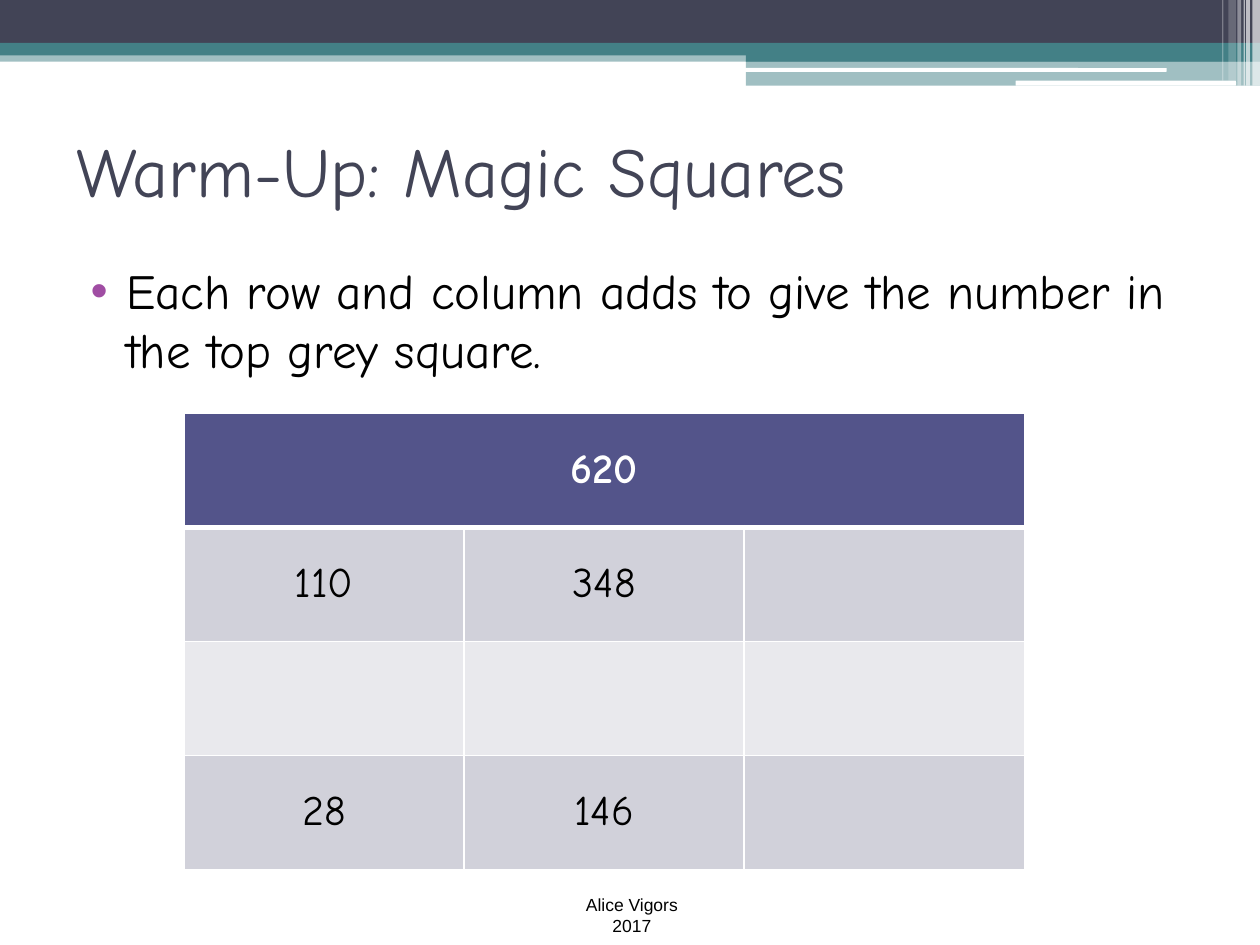
from lxml import etree
from pptx import Presentation
from pptx.dml.color import RGBColor
from pptx.enum.shapes import MSO_SHAPE
from pptx.enum.text import MSO_ANCHOR, MSO_AUTO_SIZE, PP_ALIGN
from pptx.oxml.ns import qn
from pptx.util import Inches, Pt

RECTANGLE = MSO_SHAPE.RECTANGLE
ROUNDED = MSO_SHAPE.ROUNDED_RECTANGLE
MIDDLE, TOP = MSO_ANCHOR.MIDDLE, MSO_ANCHOR.TOP
LEFT, CENTER = PP_ALIGN.LEFT, PP_ALIGN.CENTER
NO_AUTOFIT = MSO_AUTO_SIZE.NONE
FIT_SHAPE = MSO_AUTO_SIZE.SHAPE_TO_FIT_TEXT

SLATE = RGBColor(0x42, 0x44, 0x56)
TEAL = RGBColor(0x43, 0x80, 0x86)
WHITE = RGBColor(0xFF, 0xFF, 0xFF)
BLACK = RGBColor(0, 0, 0)
PURPLE = RGBColor(0xA0, 0x4D, 0xA3)
INDIGO = RGBColor(0x53, 0x54, 0x8A)
DARK_BAND = RGBColor(0xD1, 0xD1, 0xDA)
LIGHT_BAND = RGBColor(0xE9, 0xE9, 0xED)

HEADER_BARS = [
    (0, 0.4, 10, 0.09, TEAL, 50),
    (0, 0, 10, 0.34, SLATE, 100),
    (0, 0.34, 10, 0.1, TEAL, 100),
    (5.92, 0.39, 4.08, 0.1, TEAL, 100),
    (5.92, 0.48, 4.08, 0.2, TEAL, 50),
]
HEADER_LINES = [(5.91, 0.54, 3.35, 0.03), (8.06, 0.64, 1.75, 0.04)]
CORNER_STRIPES = [
    (9.94, 0.06, 0.68, 65),
    (9.89, 0.03, 0.68, 65),
    (9.87, 0.01, 0.68, 60),
    (9.82, 0.03, 0.68, 40),
    (9.75, 0.06, 0.64, 20),
    (9.7, 0.01, 0.64, 30),
]
MAGIC_SQUARE = [
    ["620", "", ""],
    ["110", "348", ""],
    ["", "", ""],
    ["28", "146", ""],
]
ROW_COLORS = [INDIGO, DARK_BAND, LIGHT_BAND, DARK_BAND]


class SlideBuilder:
    """Holds the slide and its type style, and adds each kind of element."""

    def __init__(self, slide, font="Comic Neue"):
        self.slide = slide
        self.font = font

    def style(self, paragraph, size, color, align=LEFT, bold=False, font=None):
        paragraph.alignment = align
        for run in paragraph.runs:
            run.font.name = font or self.font
            run.font.size = Pt(size)
            run.font.bold = bold
            run.font.color.rgb = color

    def place(self, shape, left, top, width, height):
        shape.left, shape.top = Inches(left), Inches(top)
        shape.width, shape.height = Inches(width), Inches(height)

    def bar(self, left, top, width, height, color, opacity=100, kind=RECTANGLE):
        shape = self.slide.shapes.add_shape(
            kind, Inches(left), Inches(top), Inches(width), Inches(height))
        shape.shadow.inherit = False
        shape.line.fill.background()
        shape.fill.solid()
        shape.fill.fore_color.rgb = color
        if opacity < 100:
            rgb = shape._element.spPr.find(f"{qn('a:solidFill')}/{qn('a:srgbClr')}")
            etree.SubElement(rgb, qn("a:alpha"), val=str(opacity * 1000))

    def title(self, text, *box):
        shape = self.slide.shapes.title
        self.place(shape, *box)
        frame = shape.text_frame
        frame.text = text
        frame.auto_size = NO_AUTOFIT
        frame.vertical_anchor = MIDDLE
        self.style(frame.paragraphs[0], 40, SLATE)

    def bullet(self, text, *box):
        shape = self.slide.placeholders[1]
        self.place(shape, *box)
        frame = shape.text_frame
        frame.text = text
        frame.auto_size = NO_AUTOFIT
        frame.vertical_anchor = TOP
        paragraph = frame.paragraphs[0]
        paragraph.space_before = Pt(3)
        self.style(paragraph, 28, BLACK)
        properties = paragraph._p.get_or_add_pPr()
        properties.set("marL", str(Inches(0.4)))
        properties.set("indent", str(Inches(-0.28)))
        bullet_color = etree.SubElement(properties, qn("a:buClr"))
        etree.SubElement(bullet_color, qn("a:srgbClr"), val=str(PURPLE))
        etree.SubElement(properties, qn("a:buFont"), typeface="Arial")
        etree.SubElement(properties, qn("a:buChar"), char="•")

    def borders(self, cell, top, bottom):
        properties = cell._tc.get_or_add_tcPr()
        widths = {"a:lnL": 1, "a:lnR": 1, "a:lnT": top, "a:lnB": bottom}
        for position, (tag, width) in enumerate(widths.items()):
            line = etree.Element(qn(tag), w=str(Pt(width)))
            fill = etree.SubElement(line, qn("a:solidFill"))
            etree.SubElement(fill, qn("a:srgbClr"), val=str(WHITE))
            properties.insert(position, line)

    def table(self, rows, colors, left, top, width, height):
        table = self.slide.shapes.add_table(
            len(rows), len(rows[0]), Inches(left), Inches(top),
            Inches(width), Inches(height)).table
        for row, (values, color) in enumerate(zip(rows, colors)):
            for column, value in enumerate(values):
                cell = table.cell(row, column)
                cell.text = value
                cell.vertical_anchor = MIDDLE
                cell.fill.solid()
                cell.fill.fore_color.rgb = color
                self.borders(cell, 3 if row == 1 else 1, 3 if row == 0 else 1)
                self.style(cell.text_frame.paragraphs[0], 24,
                           BLACK if row else WHITE, CENTER, row == 0)
        table.cell(0, 0).merge(table.cell(0, len(rows[0]) - 1))

    def caption(self, text, left, top, width, height):
        shape = self.slide.shapes.add_textbox(
            Inches(left), Inches(top), Inches(width), Inches(height))
        frame = shape.text_frame
        frame.text = text
        frame.word_wrap = True
        frame.auto_size = FIT_SHAPE
        self.style(frame.paragraphs[0], 10, BLACK, CENTER, font="Arial")


def main():
    presentation = Presentation()
    presentation.slide_width = Inches(10)
    presentation.slide_height = Inches(7.5)
    slide = presentation.slides.add_slide(presentation.slide_layouts[1])
    builder = SlideBuilder(slide)

    for bar in HEADER_BARS:
        builder.bar(*bar)
    for line in HEADER_LINES:
        builder.bar(*line, WHITE, kind=ROUNDED)
    for left, width, height, opacity in CORNER_STRIPES:
        builder.bar(left, 0, width, height, WHITE, opacity)

    builder.title("Warm-Up: Magic Squares", 0.51, 0.76, 9, 1.17)
    builder.bullet(
        "Each row and column adds to give the number in the top grey square.",
        0.5, 2.02, 9, 5.17)
    builder.table(MAGIC_SQUARE, ROW_COLORS, 1.46, 3.28, 6.67, 3.62)
    builder.caption("Alice Vigors 2017", 4.48, 7.05, 1.07, 0.44)
    presentation.save("out.pptx")


if __name__ == "__main__":
    main()
